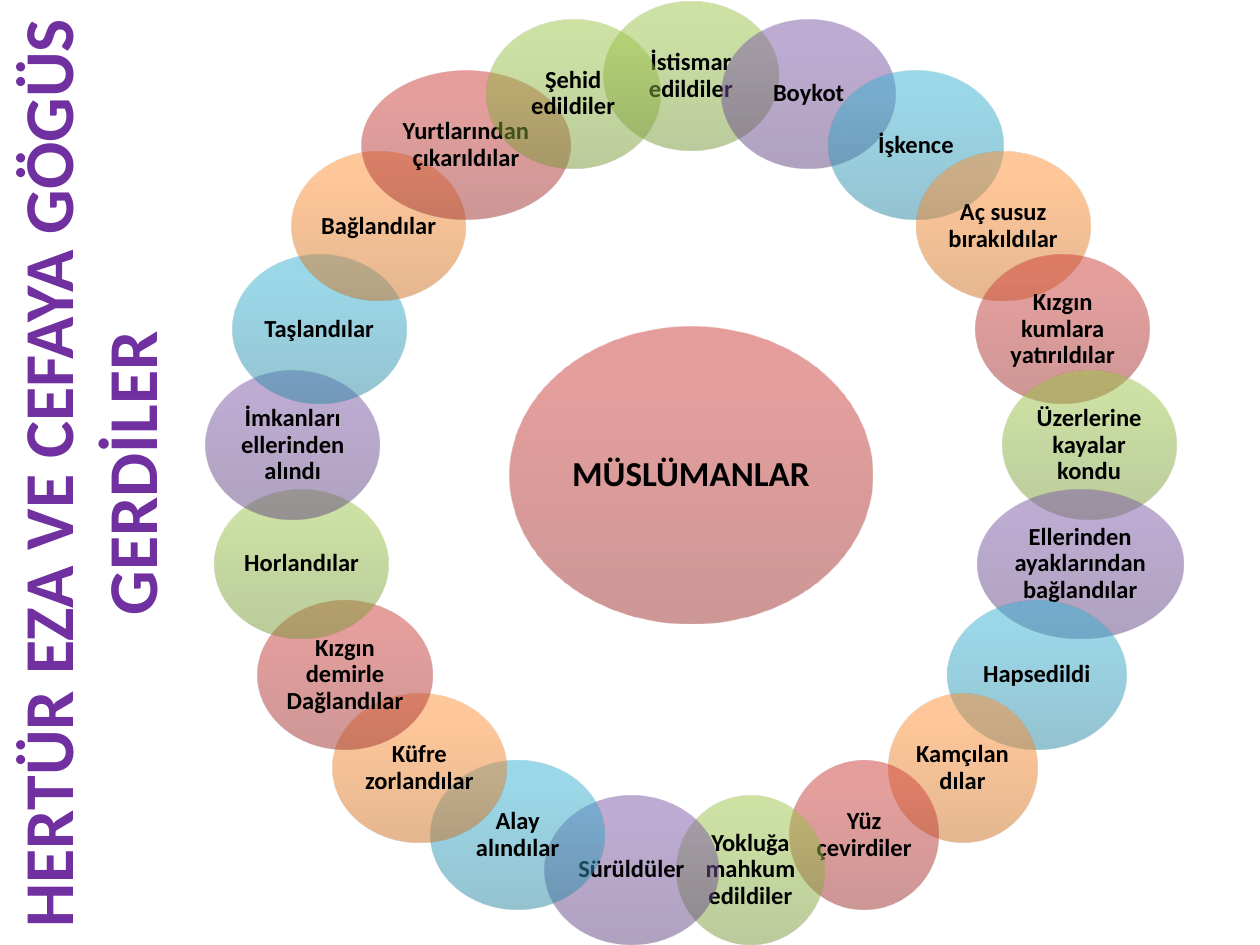
from math import cos, radians, sin

from pptx import Presentation
from pptx.dml.color import RGBColor
from pptx.enum.shapes import MSO_SHAPE
from pptx.enum.text import MSO_ANCHOR, PP_ALIGN
from pptx.oxml import parse_xml
from pptx.oxml.ns import nsdecls
from pptx.util import Cm, Pt

GREEN = ("779737", "9BC348", "9DC746")
PURPLE = ("5F4480", "7B58A6", "7C57A8")
BLUE = ("2A88A2", "37B1D2", "34B4D6")
ORANGE = ("CC6E20", "FF9034", "FF9136")
RED = ("9C2F2D", "CB3E3A", "CE3B37")
CYCLE = [GREEN, PURPLE, BLUE, ORANGE, RED]

CX, CY, RADIUS = 13.93, 9.58, 8.05
WIDE, NARROW, HEIGHT = 3.51, 3.0, 3.0

# Text and width of each ellipse, clockwise from the top
ITEMS = [
    ("İstismar edildiler", WIDE),
    ("Boykot", WIDE),
    ("İşkence", WIDE),
    ("Aç susuz bırakıldılar", WIDE),
    ("Kızgın kumlara yatırıldılar", WIDE),
    ("Üzerlerine kayalar kondu", WIDE),
    ("Ellerinden ayaklarından bağlandılar", 4.14),
    ("Hapsedildi", 3.61),
    ("Kamçılandılar", NARROW),
    ("Yüz çevirdiler", NARROW),
    ("Yokluğa mahkum edildiler", NARROW),
    ("Sürüldüler", WIDE),
    ("Alay alındılar", WIDE),
    ("Küfre zorlandılar", WIDE),
    ("Kızgın demirle Dağlandılar", WIDE),
    ("Horlandılar", WIDE),
    ("İmkanları ellerinden alındı", WIDE),
    ("Taşlandılar", WIDE),
    ("Bağlandılar", WIDE),
    ("Yurtlarından çıkarıldılar", 4.2),
    ("Şehid edildiler", WIDE),
]


def set_font(p, size, color):
    p.alignment = PP_ALIGN.CENTER
    p.font.name = "Calibri"
    p.font.size = Pt(size)
    p.font.bold = True
    p.font.color.rgb = RGBColor.from_string(color)


def add_ellipse(x, y, w, h, text, size, colors, inset):
    sp = s.shapes.add_shape(MSO_SHAPE.OVAL, Cm(x - w / 2), Cm(y - h / 2), Cm(w), Cm(h))
    sp.shadow.inherit = False
    sp.line.fill.background()
    # Half-transparent gradient, placed right after the geometry
    stops = "".join(
        f'<a:gs pos="{pos}"><a:srgbClr val="{c}"><a:alpha val="50000"/></a:srgbClr></a:gs>'
        for pos, c in zip((0, 80000, 100000), colors))
    sp._element.spPr.insert(2, parse_xml(
        f'<a:gradFill {nsdecls("a")} rotWithShape="1"><a:gsLst>{stops}</a:gsLst>'
        '<a:lin ang="16200000" scaled="0"/></a:gradFill>'))
    tf = sp.text_frame
    tf.word_wrap = True
    tf.vertical_anchor = MSO_ANCHOR.MIDDLE
    tf.margin_left = tf.margin_right = tf.margin_top = tf.margin_bottom = Cm(inset)
    p = tf.paragraphs[0]
    p.text = text
    p.line_spacing = 0.9
    set_font(p, size, "000000")


prs = Presentation()
prs.slide_width, prs.slide_height = Cm(25.4), Cm(19.05)
s = prs.slides.add_slide(prs.slide_layouts[5])

# Vertical title on the left
title = s.shapes.title
title.left, title.top, title.width, title.height = Cm(-7.77), Cm(7.8), Cm(19.05), Cm(3.48)
title.rotation = 270
tf = title.text_frame
tf.word_wrap = True
tf.vertical_anchor = MSO_ANCHOR.MIDDLE
p = tf.paragraphs[0]
r = p.add_run()
r.text = "HERTÜR EZA VE CEFAYA GÖGÜS GERDİLER"
set_font(p, 40, "7030A0")
r._r.get_or_add_rPr().append(parse_xml(
    f'<a:ln {nsdecls("a")} w="12700"><a:solidFill><a:srgbClr val="4F6228"/></a:solidFill></a:ln>'))

# Centre
add_ellipse(CX, CY, 7.32, 6, "MÜSLÜMANLAR", 20, RED, 0.07)

# Ring
for i, (text, width) in enumerate(ITEMS):
    angle = radians(360 / len(ITEMS) * i)
    add_ellipse(CX + RADIUS * sin(angle), CY - RADIUS * cos(angle), width, HEIGHT,
                text, 14, CYCLE[i % len(CYCLE)], 0.05)

prs.save("out.pptx")
